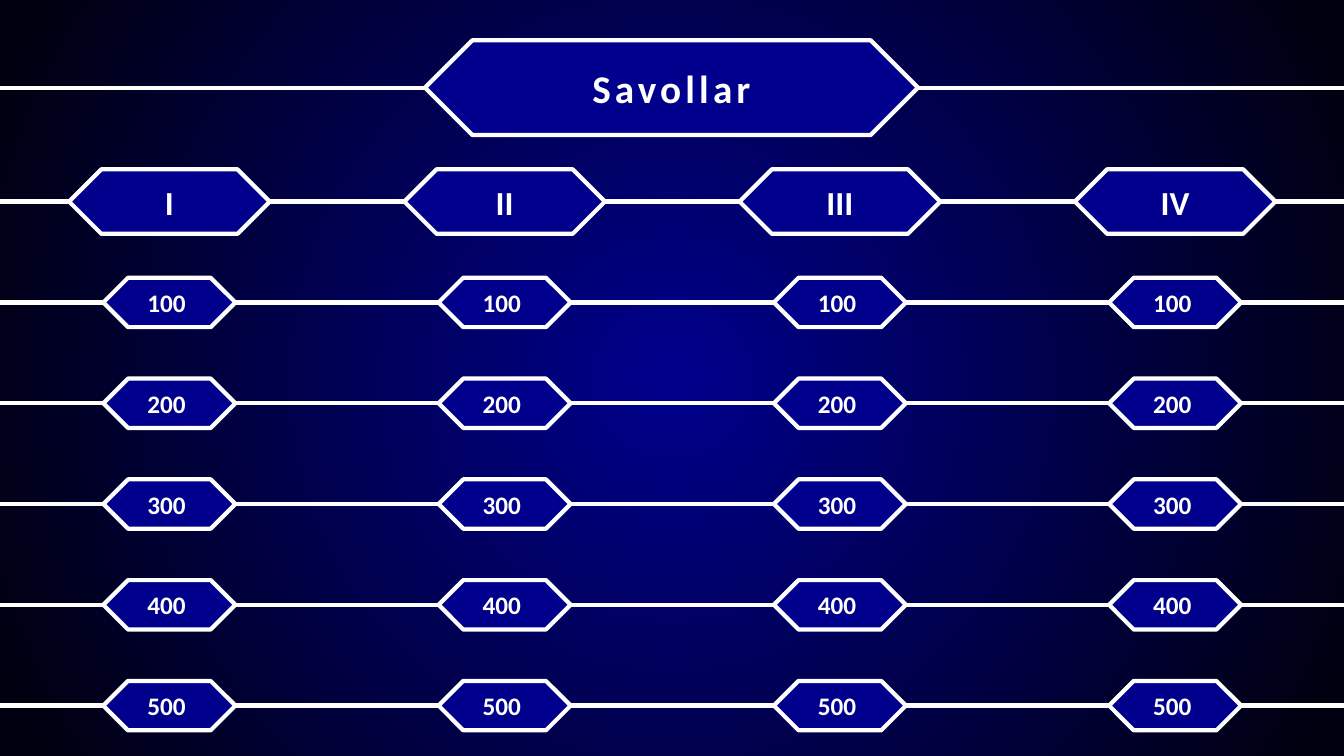
import pptx
import pptx.dml.color
import pptx.enum.shapes
import pptx.enum.text
import pptx.oxml.ns
import pptx.util
from lxml import etree

Inches = pptx.util.Inches
COLORS = {"navy": "00008D", "night": "000010", "white": "FFFFFF"}
COLORS = {name: pptx.dml.color.RGBColor.from_string(value) for name, value in COLORS.items()}
qn = pptx.oxml.ns.qn

presentation = pptx.Presentation()
presentation.slide_width = Inches(13.33)
presentation.slide_height = Inches(7.5)
slide = presentation.slides.add_slide(presentation.slide_layouts[6])

# Background: circular gradient from the slide centre
background_fill = slide.background.fill
background_fill.gradient()
for stop, color, position in zip(background_fill.gradient_stops, ("navy", "night"), (0, 0.95)):
    stop.color.rgb = COLORS[color]
    stop.position = position
gradient = slide.element.find(".//" + qn("a:gradFill"))
gradient.remove(gradient.find(qn("a:lin")))
circle = etree.SubElement(gradient, qn("a:path"), {"path": "circle"})
etree.SubElement(circle, qn("a:fillToRect"), dict.fromkeys("ltrb", "50000"))


def add_rule(y):
    rule = slide.shapes.add_connector(
        pptx.enum.shapes.MSO_CONNECTOR.STRAIGHT, Inches(13.33), Inches(y), Inches(0), Inches(y))
    rule.line.color.rgb = COLORS["white"]
    rule.line.width = pptx.util.Pt(3)
    etree.SubElement(rule.element.spPr, qn("a:effectLst"))


def add_plate(text, center_x, center_y, width, height, size):
    plate = slide.shapes.add_shape(
        pptx.enum.shapes.MSO_SHAPE.SNIP_2_DIAG_RECTANGLE,
        Inches(center_x - width / 2), Inches(center_y - height / 2), Inches(width), Inches(height))
    plate.adjustments[0] = plate.adjustments[1] = 0.5
    plate.shadow.inherit = False
    plate.fill.solid()
    plate.fill.fore_color.rgb = COLORS["navy"]
    plate.line.color.rgb = COLORS["white"]
    plate.line.width = pptx.util.Pt(3)
    plate.text_frame.vertical_anchor = pptx.enum.text.MSO_ANCHOR.MIDDLE
    paragraph = plate.text_frame.paragraphs[0]
    paragraph.alignment = pptx.enum.text.PP_ALIGN.CENTER
    run = paragraph.add_run()
    run.text = text
    font_format = {"name": "Calibri", "size": pptx.util.Pt(size), "bold": True}
    for attribute, value in font_format.items():
        setattr(run.font, attribute, value)
    run.font.color.rgb = COLORS["white"]
    return run


# Title with letter spacing
add_rule(0.87)
title_run = add_plate("Savollar", 6.66, 0.87, 4.89, 0.94, 28)
title_run.font._element.set("spc", "300")

# Soft light at the left tip of the title
for diameter in (0.3, 0.1):
    light = slide.shapes.add_shape(
        pptx.enum.shapes.MSO_SHAPE.OVAL, Inches(4.22 - diameter / 2),
        Inches(0.87 - diameter / 2), Inches(diameter), Inches(diameter))
    light.fill.solid()
    light.fill.fore_color.rgb = COLORS["white"]
    light.line.fill.background()
    light.shadow.inherit = False
    effects = light.element.spPr.find(qn("a:effectLst"))
    etree.SubElement(effects, qn("a:softEdge"), {"rad": str(Inches(0.1))})

# Lines behind the board rows
for row in range(6):
    add_rule(2 + row)

# Board: one column per topic, one row per score
for column, topic in enumerate(("I", "II", "III", "IV")):
    center_x = 1.68 + 3.325 * column
    add_plate(topic, center_x, 2, 1.99, 0.64, 24)
    for row in range(1, 6):
        add_plate(f"{row * 100} ", center_x, 2 + row, 1.31, 0.49, 18)

presentation.save("out.pptx")
